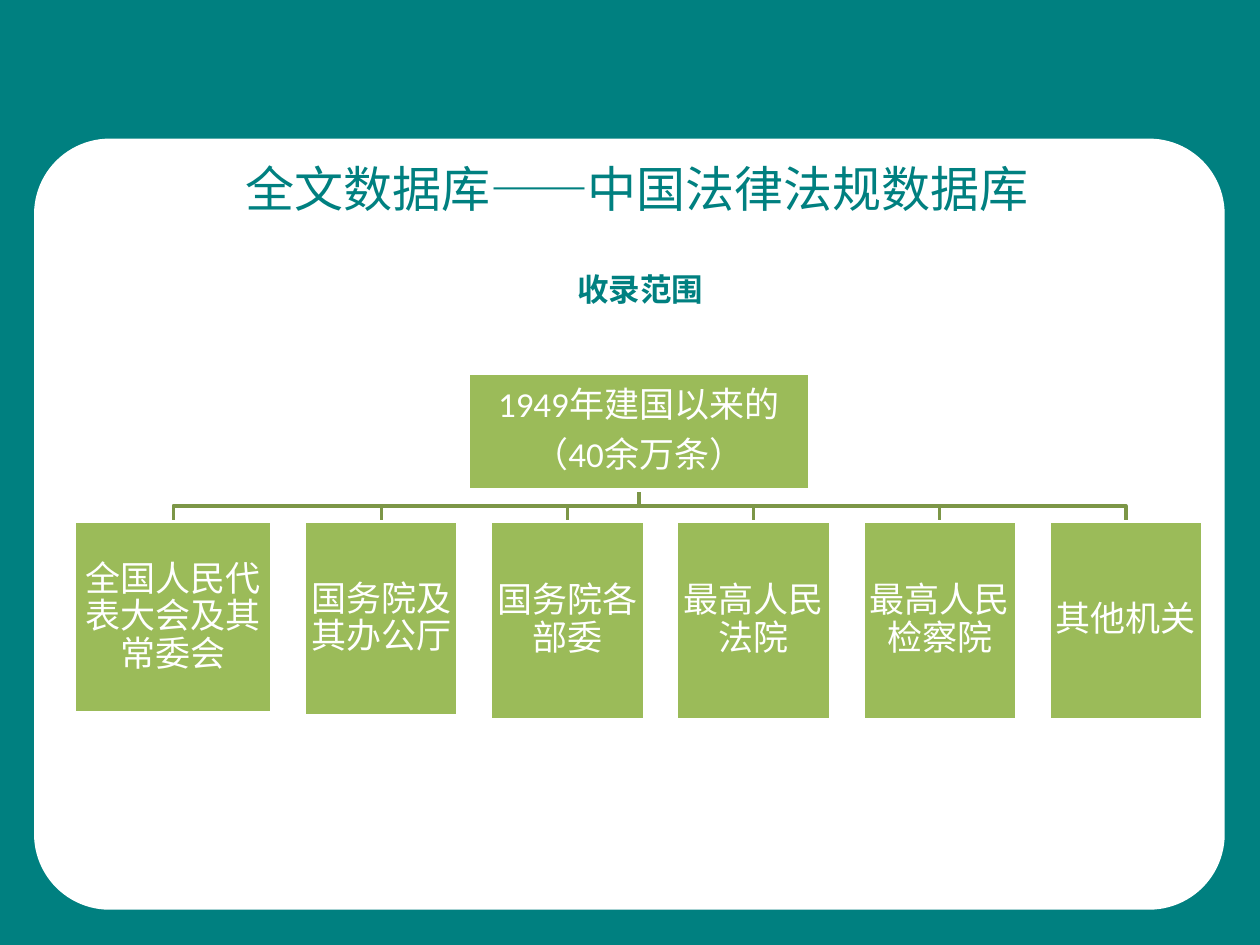
import lxml.etree
import pptx
import pptx.dml.color
import pptx.enum.shapes
import pptx.enum.text
import pptx.oxml.ns
import pptx.util

COLOURS = {"teal": "008080", "white": "FFFFFF", "green": "9BBB59", "olive": "7C9647"}
COLUMNS, ROWS = 100, 75
CJK = "Noto Sans CJK SC"


def rgb(name):
    return pptx.dml.color.RGBColor.from_string(COLOURS[name])


def write(frame, text, size, colour, font=CJK, bold=False, align="LEFT",
          anchor="TOP", inset=None, line_spacing=None, space_after=None):
    frame.word_wrap = True
    frame.vertical_anchor = pptx.enum.text.MSO_ANCHOR[anchor]
    if inset is not None:
        for side in ("left", "top", "right", "bottom"):
            setattr(frame, f"margin_{side}", pptx.util.Inches(inset))
    for index, line in enumerate(text.split("\n")):
        paragraph = frame.add_paragraph() if index else frame.paragraphs[0]
        paragraph.alignment = pptx.enum.text.PP_ALIGN[align]
        if line_spacing:
            paragraph.line_spacing = line_spacing
        if space_after:
            paragraph.space_after = pptx.util.Pt(space_after)
        run = paragraph.add_run()
        run.text = line
        run.font.size = pptx.util.Pt(size)
        run.font.bold = bold
        run.font.color.rgb = rgb(colour)
        run.font.name = font
        east_asian = lxml.etree.SubElement(
            run.font._element, pptx.oxml.ns.qn("a:ea"))
        east_asian.set("typeface", CJK)


class Deck:
    """Hold the style and current slide, with lengths in grid columns and rows."""

    def __init__(self):
        self.presentation = pptx.Presentation()
        self.presentation.slide_width = pptx.util.Inches(10)
        self.presentation.slide_height = pptx.util.Inches(7.5)
        self.column = self.presentation.slide_width / COLUMNS
        self.row = self.presentation.slide_height / ROWS
        self.slide = self.presentation.slides.add_slide(
            self.presentation.slide_layouts[6])

    def point(self, x, y):
        return round(x * self.column), round(y * self.row)

    def background(self, colour):
        fill = self.slide.background.fill
        fill.solid()
        fill.fore_color.rgb = rgb(colour)

    def text(self, x, y, width, height, text, **style):
        box = self.slide.shapes.add_textbox(
            *self.point(x, y), *self.point(width, height))
        write(box.text_frame, text, **style)

    def panel(self, x, y, width, height, colour, kind="RECTANGLE"):
        panel = self.slide.shapes.add_shape(
            pptx.enum.shapes.MSO_SHAPE[kind],
            *self.point(x, y), *self.point(width, height))
        panel.shadow.inherit = False
        panel.fill.solid()
        panel.fill.fore_color.rgb = rgb(colour)
        panel.line.fill.background()
        return panel

    def node(self, x, y, width, height, text, font=CJK):
        node = self.panel(x, y, width, height, "green")
        node.line.color.rgb = rgb("white")
        node.line.width = pptx.util.Pt(2)
        write(node.text_frame, text, size=20, colour="white", font=font,
              align="CENTER", anchor="MIDDLE", inset=0.01,
              line_spacing=0.9, space_after=7)

    def branch(self, start_x, start_y, end_x, end_y):
        middle = (start_y + end_y) / 2
        builder = self.slide.shapes.build_freeform(*self.point(start_x, start_y))
        builder.add_line_segments(
            [self.point(start_x, middle), self.point(end_x, middle),
             self.point(end_x, end_y)], close=False)
        branch = builder.convert_to_shape()
        branch.shadow.inherit = False
        branch.fill.background()
        branch.line.color.rgb = rgb("olive")
        branch.line.width = pptx.util.Pt(2)


def main():
    deck = Deck()
    deck.background("teal")
    card = deck.panel(2.7, 11, 94.5, 61.2, "white", "ROUNDED_RECTANGLE")
    card.adjustments[0] = 0.098
    deck.text(18.5, 12.1, 68.5, 5.7, "全文数据库——中国法律法规数据库",
              size=28, colour="teal")

    root_x, root_y, root_width, root_height = 37.15, 29.6, 27.1, 9.3
    bodies_y, gap = 41.4, 2.57
    bodies = [
        ("全国人民代表大会及其常委会", 15.7, 15.2, CJK),
        ("国务院及其办公厅", 12.2, 15.4, CJK),
        ("国务院各部委", 12.2, 15.7, CJK),
        ("最高人民法院", 12.2, 15.7, CJK),
        ("最高人民检察院", 12.2, 15.7, CJK),
        ("其他机关", 12.2, 15.7, "Calibri"),
    ]
    lefts = [5.9 + sum(body[1] + gap for body in bodies[:index])
             for index in range(len(bodies))]

    for left, (_, width, _, _) in zip(lefts, bodies):
        deck.branch(root_x + root_width / 2, root_y + root_height,
                    left + width / 2, bodies_y)
    deck.node(root_x, root_y, root_width, root_height,
              "1949年建国以来的\n（40余万条）", font="Calibri")
    for left, (name, width, height, font) in zip(lefts, bodies):
        deck.node(left, bodies_y, width, height, name, font=font)

    deck.text(26.4, 20.9, 48.8, 4, "收录范围",
              size=18, colour="teal", bold=True, align="CENTER")
    deck.presentation.save("out.pptx")


if __name__ == "__main__":
    main()
